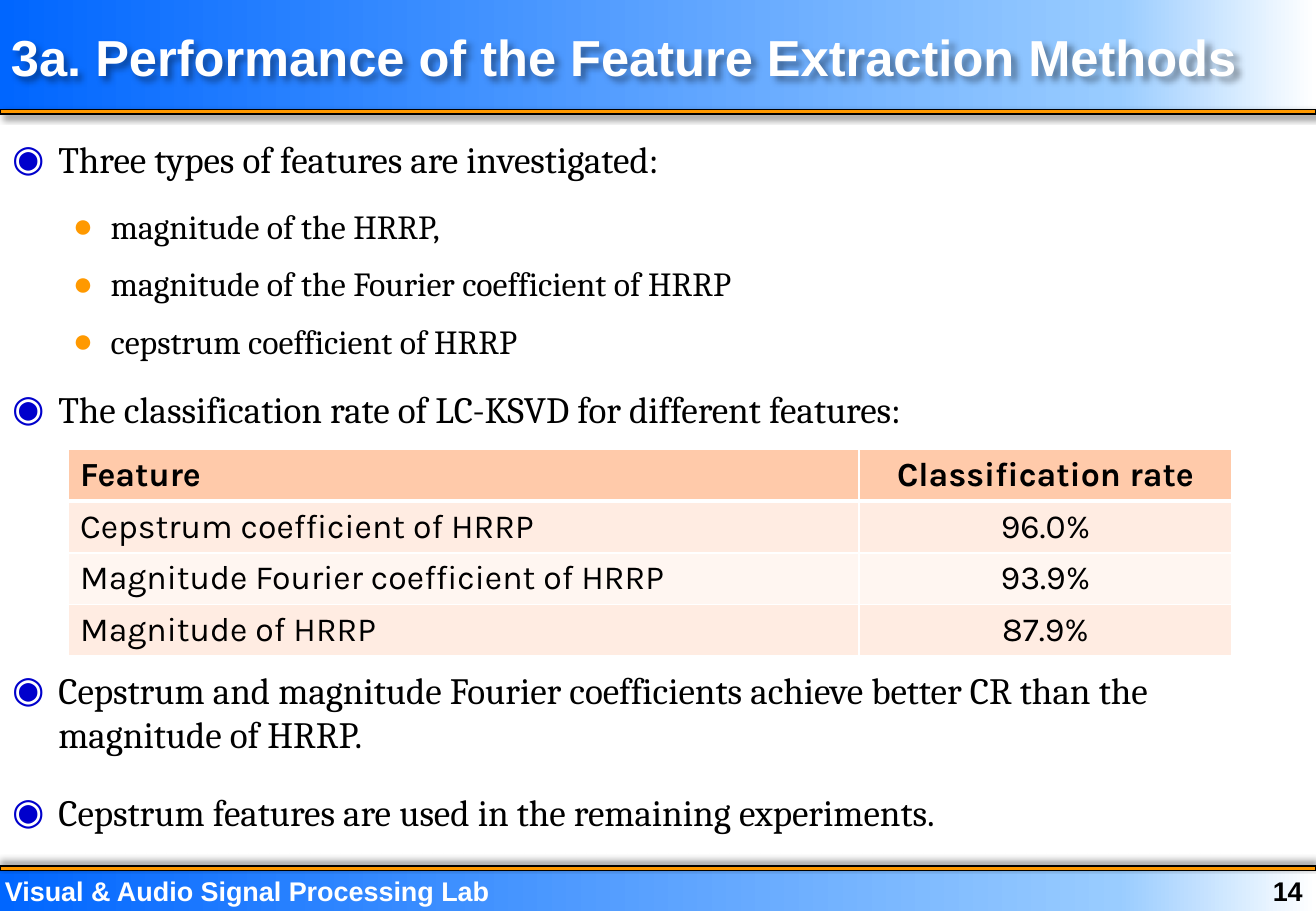
from lxml import etree
from pptx import Presentation
from pptx.dml.color import RGBColor
from pptx.enum.shapes import MSO_SHAPE
from pptx.enum.text import MSO_ANCHOR, MSO_AUTO_SIZE, PP_ALIGN
from pptx.oxml.ns import qn
from pptx.util import Inches, Pt

RECT = MSO_SHAPE.RECTANGLE
LEFT, CENTER, RIGHT = PP_ALIGN.LEFT, PP_ALIGN.CENTER, PP_ALIGN.RIGHT
TOP, MIDDLE = MSO_ANCHOR.TOP, MSO_ANCHOR.MIDDLE
NO_FIT = MSO_AUTO_SIZE.NONE

COLORS = {
    "blue": "0066FF", "sky": "99CCFF", "white": "FFFFFF", "black": "000000",
    "orange": "FF9900", "bullet": "0000CC",
    "header": "FFCAAA", "odd": "FFECE2", "even": "FFF6F1",
}
BAND_STOPS = [(0, "blue"), (85, "sky"), (100, "white")]
WIDTH = 10.83


def rgb(color):
    return RGBColor.from_string(COLORS[color])


def add_xml(parent, tag, **attributes):
    return etree.SubElement(parent, qn(tag), {k: str(v) for k, v in attributes.items()})


def add_color(parent, color):
    return add_xml(parent, "a:srgbClr", val=COLORS[color])


def write(paragraph, text, font="Arial", size=16, color="black", bold=False,
          align=LEFT, before=0, after=0):
    paragraph.text = text
    paragraph.alignment = align
    paragraph.space_before, paragraph.space_after = Pt(before), Pt(after)
    style = paragraph.font
    style.name, style.size, style.bold = font, Pt(size), bold
    style.color.rgb = rgb(color)


def set_bullet(paragraph, char, color, indent, hanging):
    properties = paragraph._p.get_or_add_pPr()
    properties.set("marL", str(Inches(indent)))
    properties.set("indent", str(-Inches(hanging)))
    add_color(add_xml(properties, "a:buClr"), color)
    add_xml(properties, "a:buFont", typeface="Arial")
    add_xml(properties, "a:buChar", char=char)


def add_shadow(shape, angle):
    shape.shadow.inherit = False
    effects = shape._element.spPr.find(qn("a:effectLst"))
    outer = add_xml(effects, "a:outerShdw", blurRad=Pt(4), dist=Pt(3),
                    dir=angle * 60000, algn="ctr", rotWithShape=0)
    add_xml(add_color(outer, "black"), "a:alpha", val=40000)


def set_borders(cell, row):
    properties = cell._tc.get_or_add_tcPr()
    widths = {"L": 1, "R": 1, "T": 3 if row == 1 else 1, "B": 3 if row == 0 else 1}
    for side, width in widths.items():
        line = add_xml(properties, f"a:ln{side}", w=Pt(width))
        add_color(add_xml(line, "a:solidFill"), "white")


class SlideBuilder:
    def __init__(self, presentation):
        self.slide = presentation.slides.add_slide(presentation.slide_layouts[1])
        self.shapes = self.slide.shapes

    def bar(self, top, height):
        shape = self.shapes.add_shape(RECT, 0, Inches(top), Inches(WIDTH), Inches(height))
        shape.shadow.inherit = False
        return shape

    def band(self, top, height):
        band = self.bar(top, height)
        band.line.fill.background()
        band.fill.gradient()
        band.fill.gradient_angle = 0
        stops = band._element.spPr.find(qn("a:gradFill")).find(qn("a:gsLst"))
        for stop in list(stops):
            stops.remove(stop)
        for position, color in BAND_STOPS:
            add_color(add_xml(stops, "a:gs", pos=position * 1000), color)

    def rule(self, top, shadow_angle):
        rule = self.bar(top, 0.04)
        rule.fill.solid()
        rule.fill.fore_color.rgb = rgb("orange")
        rule.line.color.rgb = rgb("black")
        rule.line.width = Pt(0.75)
        add_shadow(rule, shadow_angle)

    def footer(self, text, left, width, **style):
        box = self.shapes.add_textbox(Inches(left), Inches(7.2), Inches(width), Inches(0.3))
        frame = box.text_frame
        frame.word_wrap = True
        frame.margin_left = Inches(0.04)
        frame.margin_right = frame.margin_top = frame.margin_bottom = 0
        write(frame.paragraphs[0], text, bold=True, **style)

    def placeholder(self, index, left, top, height, anchor):
        holder = self.slide.placeholders[index]
        holder.left, holder.top = Inches(left), Inches(top)
        holder.width, holder.height = Inches(WIDTH), Inches(height)
        frame = holder.text_frame
        frame.word_wrap, frame.auto_size = True, NO_FIT
        frame.vertical_anchor = anchor
        # Bring the text in front of the bands
        self.shapes._spTree.append(holder._element)
        return holder

    def title(self, text):
        title = self.placeholder(0, -0.01, 0.08, 0.76, MIDDLE)
        write(title.text_frame.paragraphs[0], text, size=30, color="white", bold=True)
        add_shadow(title, 45)

    def bullets(self, items):
        frame = self.placeholder(1, 0, 1.07, 6.06, TOP).text_frame
        for number, (level, text, before) in enumerate(items):
            paragraph = frame.add_paragraph() if number else frame.paragraphs[0]
            paragraph.level = level
            if level:
                set_bullet(paragraph, "●", "orange", 0.81, 0.31)
            else:
                set_bullet(paragraph, "◉", "bullet", 0.38, 0.38)
            write(paragraph, text, font="Cambria", size=20 if level else 22,
                  before=before, after=5 if level else 10)

    def table(self, rows, column_widths):
        table = self.shapes.add_table(
            len(rows), len(column_widths), Inches(0.56), Inches(3.7),
            Inches(sum(column_widths)), Inches(0.41 * len(rows))).table
        for column, width in zip(table.columns, column_widths):
            column.width = Inches(width)
        for r, values in enumerate(rows):
            fill = "header" if r == 0 else "odd" if r % 2 else "even"
            for c, value in enumerate(values):
                cell = table.cell(r, c)
                set_borders(cell, r)
                cell.fill.solid()
                cell.fill.fore_color.rgb = rgb(fill)
                write(cell.text_frame.paragraphs[0], value, font="Karla", size=20,
                      bold=r == 0, align=CENTER if c else LEFT)


def main():
    presentation = Presentation()
    presentation.slide_width, presentation.slide_height = Inches(WIDTH), Inches(7.5)
    builder = SlideBuilder(presentation)

    # Header and footer bands
    builder.band(7.17, 0.35)
    builder.band(0, 0.91)
    builder.footer("14", 9.67, 1.05, align=RIGHT)
    builder.rule(7.13, 270)
    builder.footer("Visual & Audio Signal Processing Lab", 0, 5.29, color="white")
    builder.rule(0.9, 45)

    # Title and list; the large space before leaves room for the table
    builder.title("3a. Performance of the Feature Extraction Methods")
    builder.bullets([
        (0, "Three types of features are investigated:", 0),
        (1, "magnitude of the HRRP,", 5),
        (1, "magnitude of the Fourier coefficient of HRRP", 5),
        (1, "cepstrum coefficient of HRRP", 5),
        (0, "The classification rate of LC-KSVD for different features:", 10),
        (0, "Cepstrum and magnitude Fourier coefficients achieve better CR "
            "than the magnitude of HRRP.", 130),
        (0, "Cepstrum features are used in the remaining experiments.", 10),
    ])

    # Classification rates
    builder.table([
        ("Feature", "Classification rate"),
        ("Cepstrum coefficient of HRRP", "96.0%"),
        ("Magnitude Fourier coefficient of HRRP", "93.9%"),
        ("Magnitude of HRRP", "87.9%"),
    ], [6.51, 3.07])

    presentation.save("out.pptx")


if __name__ == "__main__":
    main()
